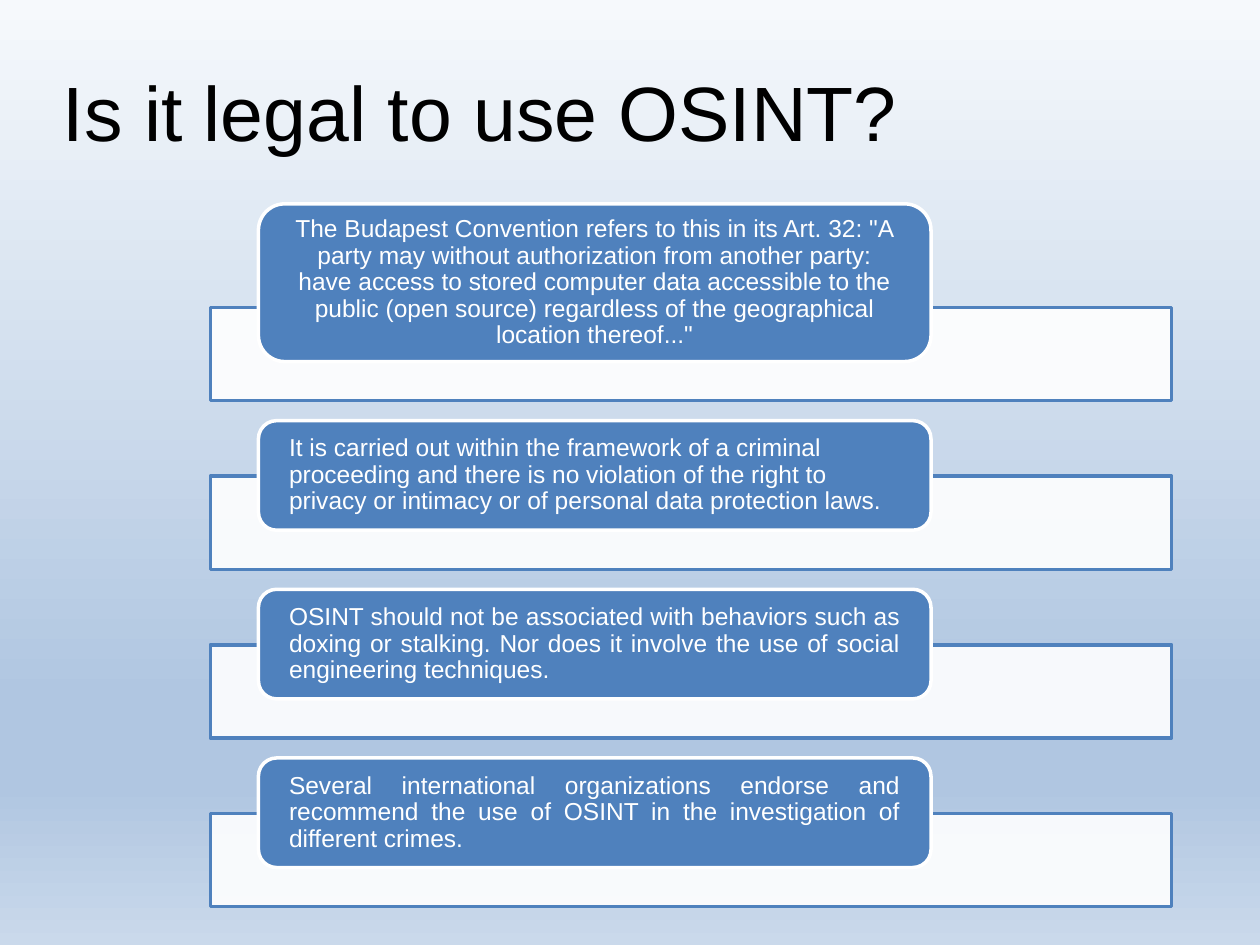
import copy
from dataclasses import dataclass

import pptx
import pptx.dml.color
import pptx.enum.shapes
import pptx.enum.text
import pptx.oxml
import pptx.oxml.ns
import pptx.util

Cm = pptx.util.Cm
Pt = pptx.util.Pt
RGB = pptx.dml.color.RGBColor.from_string
Shape = pptx.enum.shapes.MSO_SHAPE
Align = pptx.enum.text.PP_ALIGN
Anchor = pptx.enum.text.MSO_ANCHOR
qn = pptx.oxml.ns.qn


@dataclass(frozen=True)
class Theme:
    font: str = "Arial"
    title_size: int = 44
    body_size: int = 14
    title: str = "000000"
    accent: str = "4F81BD"
    light: str = "FFFFFF"
    line_width: int = 2
    panel_opacity: int = 90
    background: tuple = ((0, "F6F9FC"), (74, "B0C6E1"), (83, "B0C6E1"), (100, "CAD9EB"))


@dataclass(frozen=True)
class Point:
    text: str
    align: Align
    height: float = 2.21


THEME = Theme()
PANEL_LEFT, PANEL_TOP, PANEL_WIDTH, PANEL_HEIGHT = 4.24, 6.2, 19.38, 1.88
PANEL_PITCH = 3.4
LABEL_LEFT, LABEL_WIDTH = 5.21, 13.56
LABEL_OVERLAP = 1.09
LABEL_INSET = 0.51

POINTS = [
    Point(
        'The Budapest Convention refers to this in its Art. 32: "A party may without '
        "authorization from another party: have access to stored computer data accessible "
        "to the public (open source) regardless of the geographical location "
        'thereof..."',
        Align.CENTER,
        3.18,
    ),
    Point(
        "It is carried out within the framework of a criminal proceeding and there is no "
        "violation of the right to privacy or intimacy or of personal data protection laws.",
        Align.LEFT,
    ),
    Point(
        "OSINT should not be associated with behaviors such as doxing or stalking. Nor does "
        "it involve the use of social engineering techniques.",
        Align.JUSTIFY,
    ),
    Point(
        "Several international organizations endorse and recommend the use of OSINT in the "
        "investigation of different crimes.",
        Align.JUSTIFY,
    ),
]


def paint_background(s: pptx.slide.Slide) -> None:
    fill = s.background.fill
    fill.gradient()
    fill.gradient_angle = 270
    stops = fill.gradient_stops
    first = stops[0]
    first.color.rgb = RGB(THEME.background[0][1])
    gs_list = s.background._cSld.find(".//" + qn("a:gsLst"))
    template = copy.deepcopy(gs_list[0])
    for gs in list(gs_list):
        gs_list.remove(gs)
    for position, color in THEME.background:
        gs = copy.deepcopy(template)
        gs.set("pos", str(position * 1000))
        gs.find(qn("a:srgbClr")).set("val", color)
        gs_list.append(gs)


def write_text(sp: pptx.shapes.autoshape.Shape, text: str, size: int, color: str,
               align: Align, inset: float = 0) -> None:
    tf = sp.text_frame
    tf.word_wrap = True
    tf.vertical_anchor = Anchor.MIDDLE
    tf.margin_left = tf.margin_right = Cm(inset)
    tf.margin_top = tf.margin_bottom = 0
    p = tf.paragraphs[0]
    p.text = text
    p.alignment = align
    p.line_spacing = 0.9
    p.font.name = THEME.font
    p.font.size = Pt(size)
    p.font.color.rgb = RGB(color)


def add_box(s: pptx.slide.Slide, kind: Shape, left: float, top: float, width: float,
            height: float, fill: str, line: str) -> pptx.shapes.autoshape.Shape:
    sp = s.shapes.add_shape(kind, Cm(left), Cm(top), Cm(width), Cm(height))
    sp.shadow.inherit = False
    sp.fill.solid()
    sp.fill.fore_color.rgb = RGB(fill)
    sp.line.color.rgb = RGB(line)
    sp.line.width = Pt(THEME.line_width)
    return sp


def set_opacity(sp: pptx.shapes.autoshape.Shape, percent: int) -> None:
    color = sp._element.spPr.find(qn("a:solidFill")).find(qn("a:srgbClr"))
    alpha = pptx.oxml.parse_xml(
        f'<a:alpha {pptx.oxml.ns.nsdecls("a")} val="{percent * 1000}"/>')
    color.append(alpha)


def add_point(s: pptx.slide.Slide, point: Point, top: float) -> None:
    panel = add_box(s, Shape.RECTANGLE, PANEL_LEFT, top, PANEL_WIDTH, PANEL_HEIGHT,
                    THEME.light, THEME.accent)
    set_opacity(panel, THEME.panel_opacity)
    label = add_box(s, Shape.ROUNDED_RECTANGLE, LABEL_LEFT,
                    top + LABEL_OVERLAP - point.height, LABEL_WIDTH, point.height,
                    THEME.accent, THEME.light)
    write_text(label, point.text, THEME.body_size, THEME.light, point.align, LABEL_INSET)


def main() -> None:
    prs = pptx.Presentation()
    prs.slide_width, prs.slide_height = Cm(25.4), Cm(19.05)
    s = prs.slides.add_slide(prs.slide_layouts[6])
    paint_background(s)
    title = s.shapes.add_textbox(Cm(1.27), Cm(1.5), Cm(22.86), Cm(1.7))
    write_text(title, "Is it legal to use OSINT?", THEME.title_size, THEME.title, Align.LEFT)
    for i, point in enumerate(POINTS):
        add_point(s, point, PANEL_TOP + i * PANEL_PITCH)
    prs.save("out.pptx")


if __name__ == "__main__":
    main()
